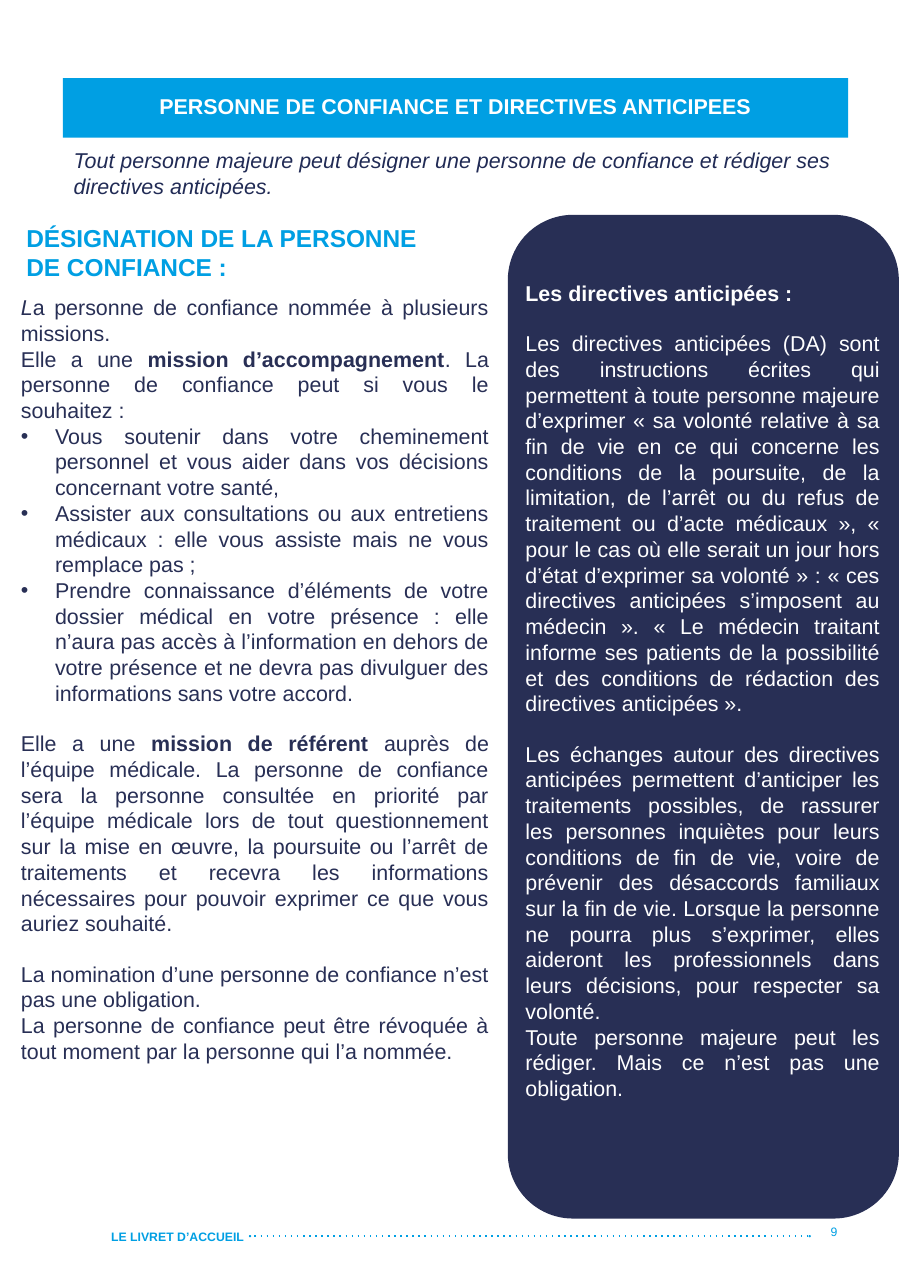
"""Build the booklet page on the trusted person and advance directives."""
from dataclasses import dataclass

from lxml import etree
from pptx import Presentation
from pptx.dml.color import RGBColor
from pptx.enum.shapes import MSO_CONNECTOR, MSO_SHAPE
from pptx.enum.text import MSO_ANCHOR, PP_ALIGN
from pptx.oxml.ns import qn
from pptx.util import Inches, Pt

SKY = RGBColor(0x00, 0x9F, 0xE3)
NAVY = RGBColor(0x28, 0x2F, 0x55)
INK = RGBColor(0x21, 0x2B, 0x55)
WHITE = RGBColor(0xFF, 0xFF, 0xFF)
LEFT, CENTER = PP_ALIGN.LEFT, PP_ALIGN.CENTER
RIGHT, JUSTIFY = PP_ALIGN.RIGHT, PP_ALIGN.JUSTIFY
TOP, MIDDLE = MSO_ANCHOR.TOP, MSO_ANCHOR.MIDDLE
RECTANGLE, OVAL = MSO_SHAPE.RECTANGLE, MSO_SHAPE.OVAL
PANEL = MSO_SHAPE.FLOWCHART_ALTERNATE_PROCESS
STRAIGHT = MSO_CONNECTOR.STRAIGHT
FONT = "Arial"
BLANK_LINE = 16.1
BULLET_INDENT = Inches(0.31)


@dataclass(frozen=True)
class Span:
    text: str
    bold: bool = False
    italic: bool = False


@dataclass(frozen=True)
class Para:
    spans: tuple[Span, ...]
    bullet: bool = False
    before: float = 0


@dataclass(frozen=True)
class TextBlock:
    bounds: tuple[float, float, float, float]
    paras: tuple[Para, ...]
    color: RGBColor
    size: float = 14
    align: PP_ALIGN = LEFT
    anchor: MSO_ANCHOR = TOP
    inset: tuple[float, float] = (0.1, 0.05)
    line_spacing: float = 1.0


@dataclass(frozen=True)
class Panel:
    kind: MSO_SHAPE
    bounds: tuple[float, float, float, float]
    color: RGBColor


def plain(text: str, bold: bool = False, italic: bool = False,
          bullet: bool = False, before: float = 0) -> Para:
    """Return a paragraph made of a single span."""
    return Para((Span(text, bold, italic),), bullet, before)


def set_all(target, values: dict) -> None:
    """Set every attribute named in the dict."""
    for name, value in values.items():
        setattr(target, name, value)


def add_panel(page, panel: Panel) -> None:
    """Draw a filled shape without outline."""
    shape = page.shapes.add_shape(panel.kind, *map(Inches, panel.bounds))
    shape.shadow.inherit = False
    shape.fill.solid()
    shape.fill.fore_color.rgb = panel.color
    shape.line.fill.background()


def add_bullet(paragraph) -> None:
    """Give a paragraph a round bullet with a hanging indent."""
    properties = paragraph._p.get_or_add_pPr()
    properties.set("marL", str(BULLET_INDENT))
    properties.set("indent", str(-BULLET_INDENT))
    etree.SubElement(properties, qn("a:buFont"), typeface=FONT)
    etree.SubElement(properties, qn("a:buChar"), char="•")


def add_text(page, block: TextBlock) -> None:
    """Write a text block in its own text box."""
    frame = page.shapes.add_textbox(*map(Inches, block.bounds)).text_frame
    side, edge = map(Inches, block.inset)
    set_all(frame, {"word_wrap": True, "vertical_anchor": block.anchor,
                    "margin_left": side, "margin_right": side,
                    "margin_top": edge, "margin_bottom": edge})
    for index, para in enumerate(block.paras):
        paragraph = frame.add_paragraph() if index else frame.paragraphs[0]
        set_all(paragraph, {"alignment": block.align,
                            "line_spacing": block.line_spacing})
        if para.before:
            paragraph.space_before = Pt(para.before)
        if para.bullet:
            add_bullet(paragraph)
        for span in para.spans:
            run = paragraph.add_run()
            run.text = span.text
            set_all(run.font, {"name": FONT, "size": Pt(block.size),
                               "bold": span.bold, "italic": span.italic})
            run.font.color.rgb = block.color


def add_dotted_rule(page, start: float, end: float, y: float) -> None:
    """Draw the dotted footer rule."""
    rule = page.shapes.add_connector(
        STRAIGHT, Inches(start), Inches(y), Inches(end), Inches(y))
    rule.line.color.rgb = SKY
    rule.line.width = Pt(1)
    properties = rule._element.spPr
    etree.SubElement(properties.find(qn("a:ln")), qn("a:prstDash"), val="dot")
    etree.SubElement(properties, qn("a:effectLst"))


MISSIONS = (
    Para((Span("L", italic=True),
          Span("a personne de confiance nommée à plusieurs missions."))),
    Para((Span("Elle a une "), Span("mission d’accompagnement", bold=True),
          Span(". La personne de confiance peut si vous le souhaitez :"))),
    plain("Vous soutenir dans votre cheminement personnel et vous aider dans "
          "vos décisions concernant votre santé,", bullet=True),
    plain("Assister aux consultations ou aux entretiens médicaux : elle vous "
          "assiste mais ne vous remplace pas ;", bullet=True),
    plain("Prendre connaissance d’éléments de votre dossier médical en votre "
          "présence : elle n’aura pas accès à l’information en dehors de votre "
          "présence et ne devra pas divulguer des informations sans votre "
          "accord.", bullet=True),
    Para((Span("Elle a une "), Span("mission de référent ", bold=True),
          Span("auprès de l’équipe médicale. La personne de confiance sera la "
               "personne consultée en priorité par l’équipe médicale lors de "
               "tout questionnement sur la mise en œuvre, la poursuite ou "
               "l’arrêt de traitements et recevra les informations nécessaires "
               "pour pouvoir exprimer ce que vous auriez souhaité.")),
         before=BLANK_LINE),
    plain("La nomination d’une personne de confiance n’est pas une obligation.",
          before=BLANK_LINE),
    plain("La personne de confiance peut être révoquée à tout moment par la "
          "personne qui l’a nommée."),
)
DIRECTIVES = (
    plain("Les directives anticipées :", bold=True),
    plain("Les directives anticipées (DA) sont des instructions écrites qui "
          "permettent à toute personne majeure d’exprimer « sa volonté relative "
          "à sa fin de vie en ce qui concerne les conditions de la poursuite, "
          "de la limitation, de l’arrêt ou du refus de traitement ou d’acte "
          "médicaux », « pour le cas où elle serait un jour hors d’état "
          "d’exprimer sa volonté » : « ces directives anticipées s’imposent au "
          "médecin ». « Le médecin traitant informe ses patients de la "
          "possibilité et des conditions de rédaction des directives "
          "anticipées ».", before=BLANK_LINE),
    plain("Les échanges autour des directives anticipées permettent d’anticiper "
          "les traitements possibles, de rassurer les personnes inquiètes pour "
          "leurs conditions de fin de vie, voire de prévenir des désaccords "
          "familiaux sur la fin de vie. Lorsque la personne ne pourra plus "
          "s’exprimer, elles aideront les professionnels dans leurs décisions, "
          "pour respecter sa volonté.", before=BLANK_LINE),
    plain("Toute personne majeure peut les rédiger. Mais ce n’est pas une "
          "obligation."),
)
TITLE_BOUNDS = (0.57, 0.71, 7.13, 0.54)
PANELS = (
    Panel(OVAL, (2.26, 11.21, 0.02, 0.02), SKY),
    Panel(OVAL, (7.34, 11.21, 0.02, 0.02), SKY),
    Panel(RECTANGLE, TITLE_BOUNDS, SKY),
    Panel(PANEL, (4.61, 1.95, 3.55, 9.11), NAVY),
)
TEXTS = (
    TextBlock(TITLE_BOUNDS,
              (plain("PERSONNE DE CONFIANCE ET DIRECTIVES ANTICIPEES", bold=True),),
              WHITE, align=CENTER, anchor=MIDDLE, line_spacing=0.9),
    TextBlock((0.57, 1.29, 7.13, 0.79),
              (plain("Tout personne majeure peut désigner une personne de confiance "
                     "et rédiger ses directives anticipées.", italic=True),), INK),
    TextBlock((0.14, 1.95, 3.99, 0.68),
              (plain("DÉSIGNATION DE LA PERSONNE DE CONFIANCE :", bold=True),),
              SKY, size=16, anchor=MIDDLE),
    TextBlock((0.15, 2.63, 4.33, 8.17), MISSIONS, NAVY, align=JUSTIFY, inset=(0.04, 0.04)),
    TextBlock((4.73, 2.5, 3.3, 8.02), DIRECTIVES, WHITE, align=JUSTIFY, inset=(0.04, 0.04)),
    TextBlock((0.91, 11.11, 4.19, 0.24), (plain("LE LIVRET D’ACCUEIL", bold=True),), SKY, size=8),
    TextBlock((5.84, 10.87, 1.86, 0.62), (plain("9"),), SKY, size=8, align=RIGHT, anchor=MIDDLE),
)


def main() -> None:
    """Build the page and save the deck."""
    deck = Presentation()
    set_all(deck, {"slide_width": Inches(8.27), "slide_height": Inches(11.69)})
    page = deck.slides.add_slide(deck.slide_layouts[6])
    add_dotted_rule(page, 2.31, 7.33, 11.22)
    for panel in PANELS:
        add_panel(page, panel)
    for block in TEXTS:
        add_text(page, block)
    deck.save("out.pptx")


if __name__ == "__main__":
    main()
